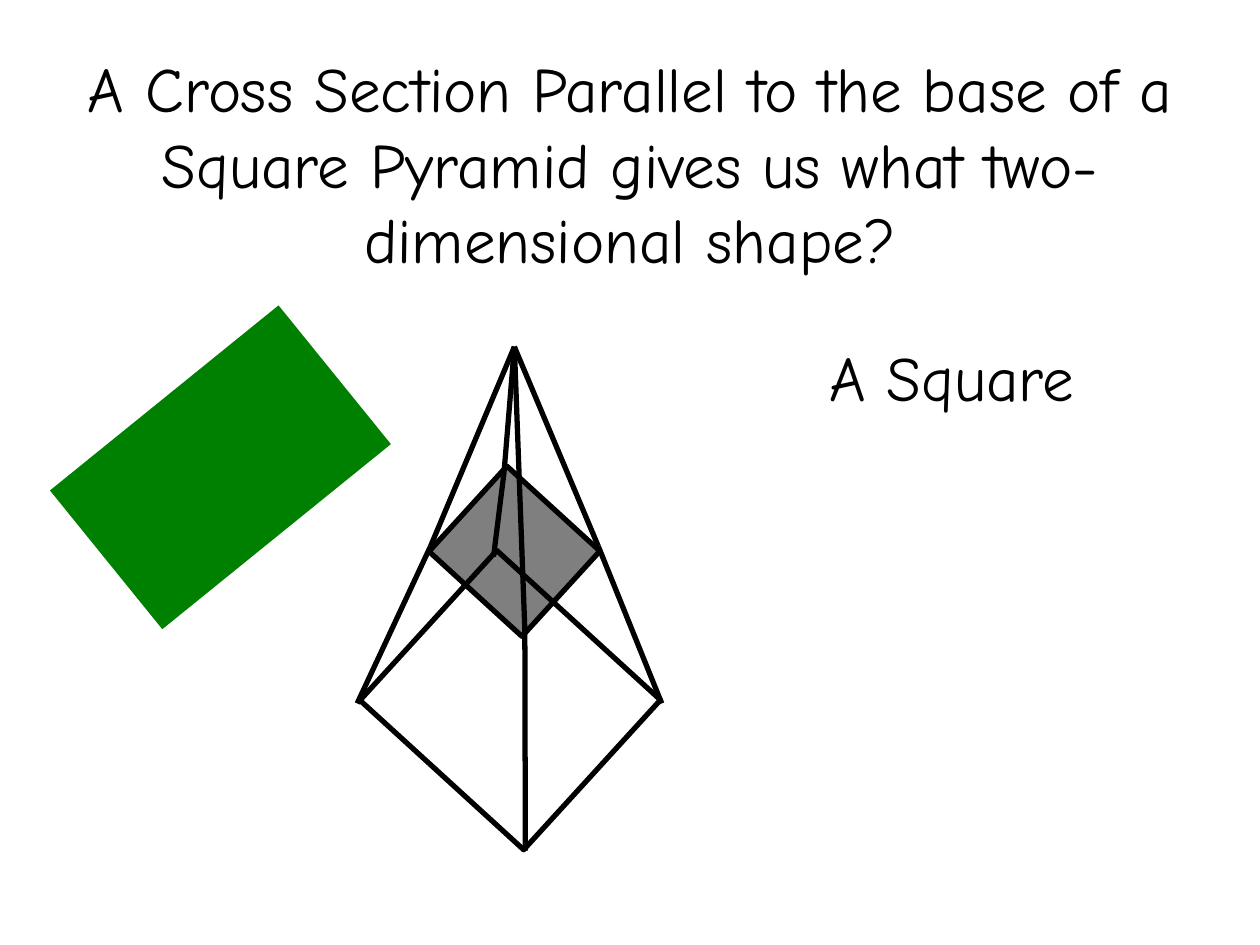
from lxml.etree import SubElement
from pptx import Presentation
from pptx.dml.color import RGBColor
from pptx.enum.shapes import MSO_CONNECTOR as Connector, MSO_SHAPE as Shape
from pptx.enum.text import MSO_ANCHOR as Anchor, PP_ALIGN as Align
from pptx.oxml.ns import qn
from pptx.util import Cm, Pt

COLORS = {"ink": "000000", "cover": "008000"}
FONT = {"name": "Comic Neue", "size": Pt(36)}
EDGE_WIDTH = Pt(3)

# Content: all lengths in centimetres; boxes are left, top, width, height
TEXTS = [
    {"text": "A Cross Section Parallel to the base of a Square Pyramid "
             "gives us what two- dimensional shape?",
     "box": (1.27, 0.42, 22.86, 5.74),
     "frame": {"word_wrap": True, "vertical_anchor": Anchor.MIDDLE},
     "align": Align.CENTER},
    {"text": "A Square",
     "box": (16.47, 6.7, 5.97, 1.78),
     "frame": {"word_wrap": False, "vertical_anchor": Anchor.TOP},
     "align": Align.LEFT},
]
CROSS_SECTION = {"box": (9.1, 9.95, 2.54, 2.33), "turn": 42.4,
                 "fill": "ink", "alpha": 50, "line": "ink"}
PYRAMID_BASE = {"box": (8.05, 12.07, 4.47, 4.09), "turn": 42.4, "line": "ink"}
COVER = {"box": (1.48, 7.62, 5.93, 3.6), "turn": 321, "fill": "cover"}

# Each slanted edge runs from the apex through the section to a base corner
APEX = (10.37, 6.99)
EDGES = {
    "front": [(10.58, 12.7), (10.59, 17.15)],
    "left": [(8.68, 11.01), (7.2, 14.18)],
    "right": [(12.06, 11.01), (13.34, 14.18)],
    "back": [(10.16, 9.53), (9.95, 11.22)],
}


def color(key):
    return RGBColor.from_string(COLORS[key])


def set_all(target, values):
    for name, value in values.items():
        setattr(target, name, value)


def set_line(line, key):
    line.color.rgb = color(key)
    line.width = EDGE_WIDTH


def add_text(page, item):
    box = page.shapes.add_textbox(*map(Cm, item["box"]))
    set_all(box.text_frame, item["frame"])
    para = box.text_frame.paragraphs[0]
    para.alignment = item["align"]
    span = para.add_run()
    span.text = item["text"]
    set_all(span.font, FONT)
    span.font.color.rgb = color("ink")


def add_rectangle(page, item):
    box = page.shapes.add_shape(Shape.RECTANGLE, *map(Cm, item["box"]))
    box.rotation = item["turn"]
    box.shadow.inherit = False
    if "fill" in item:
        box.fill.solid()
        box.fill.fore_color.rgb = color(item["fill"])
    else:
        box.fill.background()
    if "alpha" in item:
        tint = box.fill._xPr.find(".//" + qn("a:srgbClr"))
        SubElement(tint, qn("a:alpha"), val=str(item["alpha"] * 1000))
    if "line" in item:
        set_line(box.line, item["line"])
    else:
        box.line.fill.background()


def add_edge(page, start, end):
    edge = page.shapes.add_connector(Connector.STRAIGHT, *map(Cm, start + end))
    set_line(edge.line, "ink")
    SubElement(edge._element.spPr, qn("a:effectLst"))


def main():
    deck = Presentation()
    set_all(deck, {"slide_width": Cm(25.4), "slide_height": Cm(19.05)})
    page = deck.slides.add_slide(deck.slide_layouts[6])

    # Section, base and cover
    for item in (CROSS_SECTION, PYRAMID_BASE, COVER):
        add_rectangle(page, item)

    # Slanted edges, above and below the section
    for cut, corner in EDGES.values():
        add_edge(page, APEX, cut)
        add_edge(page, cut, corner)

    # Question and answer
    for item in TEXTS:
        add_text(page, item)

    deck.save("out.pptx")


if __name__ == "__main__":
    main()
